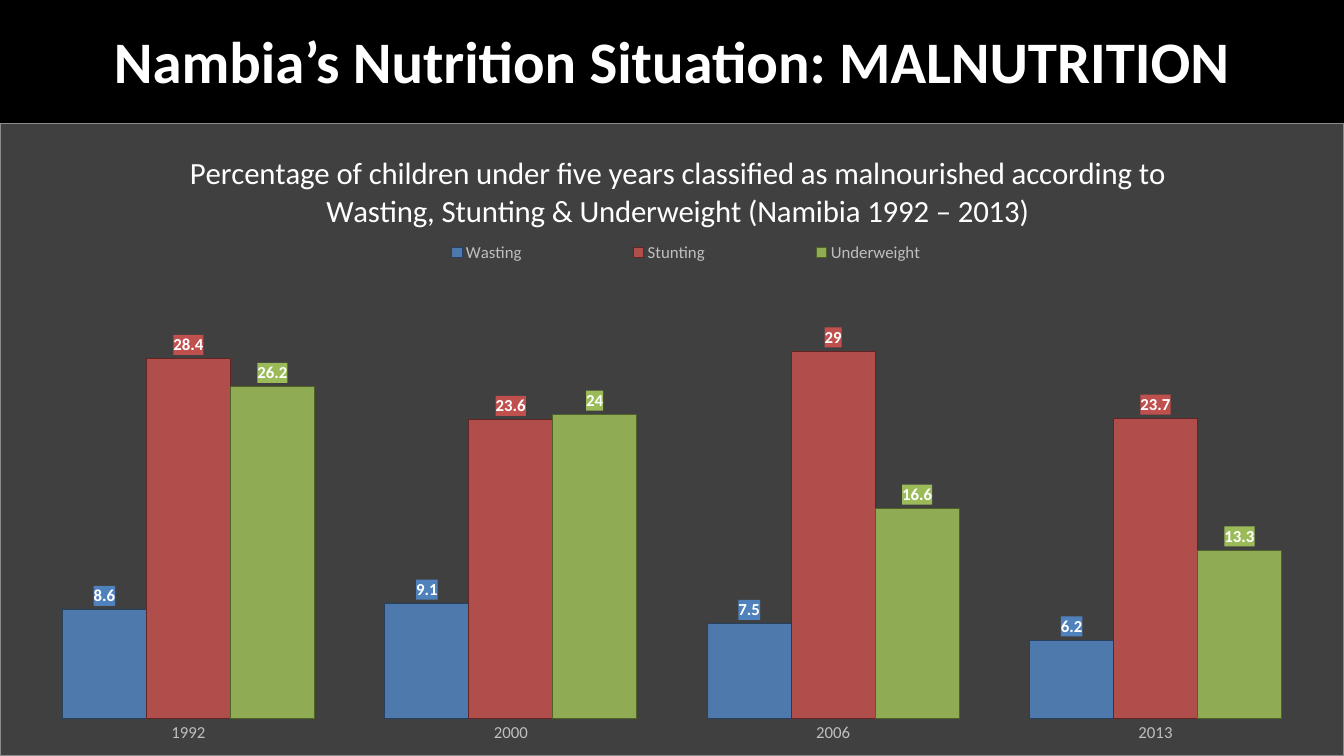
import pptx
import pptx.chart.data
import pptx.dml.color
import pptx.enum.chart
import pptx.enum.text
import pptx.oxml
import pptx.util

WIDTH, HEIGHT = 13.33, 7.5
FONT = "Calibri"
HEADING = "Nambia’s Nutrition Situation: MALNUTRITION"
CHART_TITLE = (
    "Percentage of children under five years classified as malnourished "
    "according to Wasting, Stunting & Underweight (Namibia 1992 – 2013)"
)
YEARS = ["1992", "2000", "2006", "2013"]
SERIES = [
    ("Wasting", (8.6, 9.1, 7.5, 6.2), "4F81BD", "254061"),
    ("Stunting", (28.4, 23.6, 29, 23.7), "C0504D", "632523"),
    ("Underweight", (26.2, 24, 16.6, 13.3), "9BBB59", "4F6228"),
]
HEADING_BOX = (0.05, -0.004, 0.9, 0.167)
CHART_BOX = (0, 0.163, 1, 0.837)
TITLE_PLACE = (0.137, 0.035)
LEGEND_PLACE = (0.257, 0.174, 0.507, 0.06)
PLOT_PLACE = (0.02, 0.24, 0.96, 0.702)
NAMESPACES = (
    'xmlns:c="http://schemas.openxmlformats.org/drawingml/2006/chart" '
    'xmlns:a="http://schemas.openxmlformats.org/drawingml/2006/main"'
)


def colour(value):
    return pptx.dml.color.RGBColor.from_string(value)


def place(shares):
    sizes = (WIDTH, HEIGHT, WIDTH, HEIGHT)
    return [pptx.util.Inches(share * size) for share, size in zip(shares, sizes)]


def style(font, size, value, bold=False):
    font.name = FONT
    font.size = pptx.util.Pt(size)
    font.bold = bold
    font.color.rgb = colour(value)


def solid(value, inside=""):
    return f'<a:solidFill><a:srgbClr val="{value}">{inside}</a:srgbClr></a:solidFill>'


def shape_properties(content):
    return pptx.oxml.parse_xml(f"<c:spPr {NAMESPACES}>{content}</c:spPr>")


def set_layout(parent, before, shares, inner=False):
    for old in parent.xpath("c:layout"):
        parent.remove(old)
    target = '<c:layoutTarget val="inner"/>' if inner else ""
    modes = "".join(f'<c:{axis}Mode val="edge"/>' for axis in "xy")
    values = "".join(f'<c:{key} val="{share}"/>' for key, share in zip("xywh", shares))
    layout = pptx.oxml.parse_xml(
        f"<c:layout {NAMESPACES}><c:manualLayout>{target}{modes}{values}"
        "</c:manualLayout></c:layout>"
    )
    parent.xpath(before)[0].addprevious(layout)


def add_heading(page):
    box = page.shapes.add_textbox(*place(HEADING_BOX))
    frame = box.text_frame
    frame.word_wrap = True
    frame.vertical_anchor = pptx.enum.text.MSO_ANCHOR.MIDDLE
    para = frame.paragraphs[0]
    para.alignment = pptx.enum.text.PP_ALIGN.CENTER
    span = para.add_run()
    span.text = HEADING
    style(span.font, 42, "FFFFFF", True)


def add_chart_title(chart):
    para = chart.chart_title.text_frame.paragraphs[0]
    para.alignment = pptx.enum.text.PP_ALIGN.CENTER
    span = para.add_run()
    span.text = CHART_TITLE
    style(span.font, 22, "FFFFFF")
    set_layout(chart.chart_title._element, "c:overlay", TITLE_PLACE)


def style_series(series, fill, edge):
    series.format.fill.solid()
    series.format.fill.fore_color.rgb = colour(fill)
    shade = series._element.xpath("c:spPr/a:solidFill/a:srgbClr")[0]
    shade.append(pptx.oxml.parse_xml(f'<a:alpha {NAMESPACES} val="88000"/>'))
    series.format.line.color.rgb = colour(edge)
    series.format.line.width = pptx.util.Pt(0.75)
    labels = series.data_labels
    labels.show_value = True
    labels.position = pptx.enum.chart.XL_LABEL_POSITION.OUTSIDE_END
    style(labels.font, 12, "FFFFFF", True)
    labels._element.xpath("c:txPr")[0].addprevious(shape_properties(solid(fill)))


def add_nutrition_chart(page):
    data = pptx.chart.data.CategoryChartData()
    data.categories = YEARS
    for name, values, _, _ in SERIES:
        data.add_series(name, values)
    kind = pptx.enum.chart.XL_CHART_TYPE.COLUMN_CLUSTERED
    chart = page.shapes.add_chart(kind, *place(CHART_BOX), data).chart
    style(chart.font, 10, "000000")
    add_chart_title(chart)

    chart.has_legend = True
    chart.legend.position = pptx.enum.chart.XL_LEGEND_POSITION.TOP
    chart.legend.include_in_layout = False
    style(chart.legend.font, 12, "BFBFBF")
    set_layout(chart.legend._element, "c:overlay", LEGEND_PLACE)

    years = chart.category_axis
    years.major_tick_mark = pptx.enum.chart.XL_TICK_MARK.NONE
    years.format.line.fill.background()
    style(years.tick_labels.font, 12, "BFBFBF")
    scale = chart.value_axis
    scale.minimum_scale, scale.maximum_scale = 0, 35
    scale.has_major_gridlines = False
    scale.visible = False

    plot = chart.plots[0]
    plot.gap_width = 84
    plot.overlap = 0
    plot.vary_by_categories = False
    for series, (_, _, fill, edge) in zip(plot.series, SERIES):
        style_series(series, fill, edge)

    root = chart._chartSpace
    set_layout(root.xpath("c:chart/c:plotArea")[0], "c:barChart", PLOT_PLACE, True)
    border = f'<a:ln w="{pptx.util.Pt(0.5)}">{solid("8C8C8C")}</a:ln>'
    root.xpath("c:chart")[0].addnext(shape_properties(solid("404040") + border))


def main():
    deck = pptx.Presentation()
    deck.slide_width = pptx.util.Inches(WIDTH)
    deck.slide_height = pptx.util.Inches(HEIGHT)
    page = deck.slides.add_slide(deck.slide_layouts[6])
    page.background.fill.solid()
    page.background.fill.fore_color.rgb = colour("000000")
    add_heading(page)
    add_nutrition_chart(page)
    deck.save("out.pptx")


if __name__ == "__main__":
    main()
